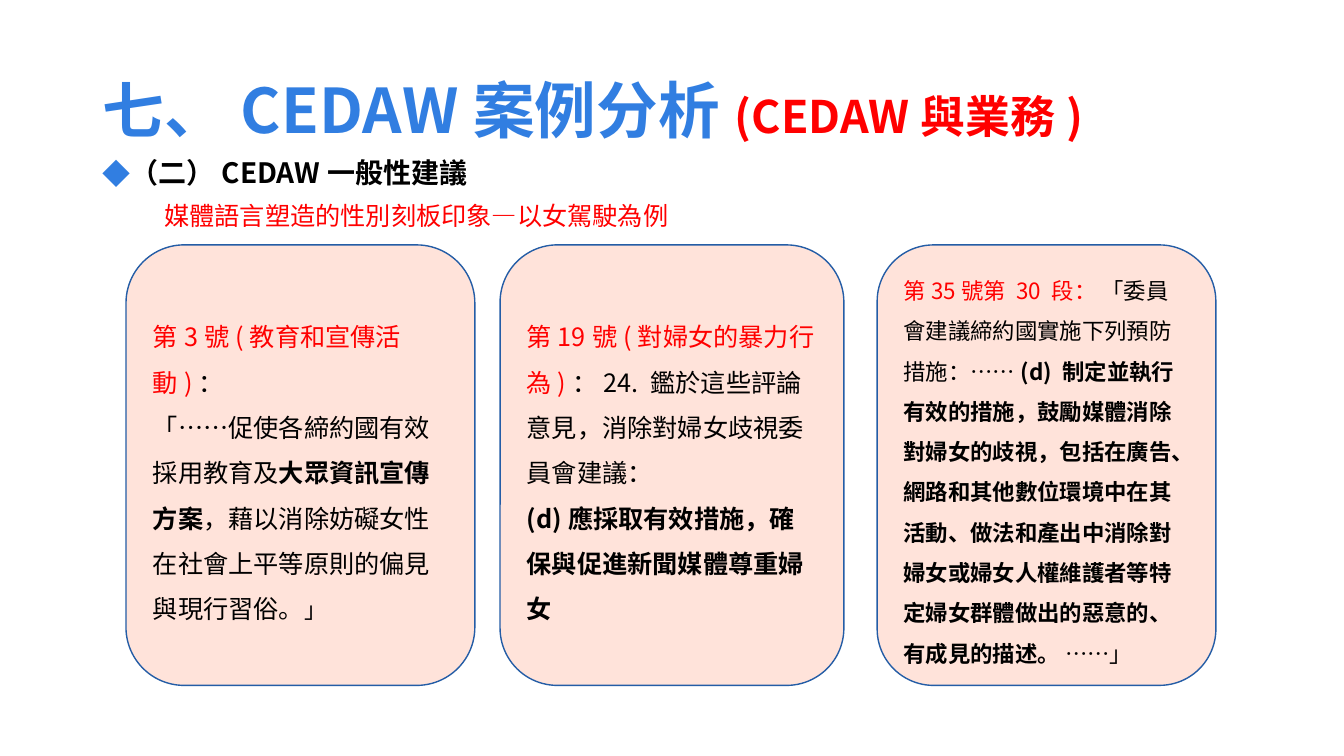
from dataclasses import dataclass
from lxml.etree import SubElement as Sub
from pptx import Presentation
from pptx.dml.color import RGBColor as RGB
from pptx.enum.shapes import MSO_SHAPE as Shape
from pptx.enum.text import MSO_ANCHOR as Anchor, MSO_AUTO_SIZE as Fit, PP_ALIGN as Align
from pptx.oxml.ns import qn
from pptx.util import Inches, Pt


@dataclass(frozen=True)
class Theme:
    font: str = "Noto Sans CJK TC"
    blue: RGB = RGB(0x31, 0x7E, 0xE1)
    red: RGB = RGB(0xFF, 0, 0)
    black: RGB = RGB(0, 0, 0)
    pink: RGB = RGB(0xFF, 0xE3, 0xDA)
    edge: RGB = RGB(0x24, 0x5D, 0xA6)
    title: int = 44
    topic: int = 32
    head: int = 20
    body: int = 18
    small: int = 16


theme = Theme()


def write(para, runs, space):
    para.alignment = Align.LEFT
    para.line_spacing = space
    para.font.name = theme.font
    for text, size, color, bold in runs:
        run = para.add_run()
        run.text = text
        run.font.size = Pt(size)
        run.font.bold = bold
        run.font.color.rgb = color
        run.font.name = theme.font
        Sub(run.font._element, qn("a:ea"), typeface=theme.font)


deck = Presentation()
deck.slide_width, deck.slide_height = Inches(13.33), Inches(7.5)
slide = deck.slides.add_slide(deck.slide_layouts[5])

title = slide.shapes.title
title.left, title.top = Inches(0.92), Inches(0.4)
title.width, title.height = Inches(11.5), Inches(1.45)
frame = title.text_frame
frame.auto_size = Fit.NONE
frame.vertical_anchor = Anchor.MIDDLE
write(frame.paragraphs[0], [
    ("七、CEDAW案例分析", theme.title, theme.blue, True),
    ("(CEDAW與業務)", theme.topic, theme.red, True),
], 0.9)

head = slide.shapes.add_textbox(Inches(0.92), Inches(1.39), Inches(10.85), Inches(0.67))
head.text_frame.word_wrap = True
para = head.text_frame.paragraphs[0]
props = para._p.get_or_add_pPr()
props.set("marL", str(Inches(0.25)))
props.set("indent", str(-Inches(0.25)))
tint = Sub(props, qn("a:buClr"))
Sub(tint, qn("a:srgbClr"), val=str(theme.blue))
Sub(props, qn("a:buFont"), typeface=theme.font)
Sub(props, qn("a:buChar"), char="◆")
write(para, [("（二）CEDAW一般性建議", theme.head, theme.black, True)], 1.3)

topic = slide.shapes.add_textbox(Inches(1.53), Inches(1.94), Inches(5.25), Inches(0.4))
topic.text_frame.word_wrap = False
write(topic.text_frame.paragraphs[0], [
    ("媒體語言塑造的性別刻板印象—以女駕駛為例", theme.body, theme.red, False),
], 1.0)

cards = [
    (1.25, 3.46, [
        [("第3號(教育和宣傳活動)", theme.body, theme.red, False),
         ("：", theme.body, theme.black, False)],
        [("「⋯⋯促使各締約國有效採用教育及", theme.body, theme.black, False),
         ("大眾資訊宣傳方案", theme.body, theme.black, True),
         ("，藉以消除妨礙女性在社會上平等原則的偏見與現行習俗。", theme.body, theme.black, False),
         ("」", theme.small, theme.black, False)],
    ]),
    (4.96, 3.41, [
        [("第19號(對婦女的暴力行為)", theme.body, theme.red, False),
         ("：24. 鑑於這些評論意見，消除對婦女歧視委員會建議：", theme.body, theme.black, False)],
        [("(d)應採取有效措施，確保與促進新聞媒體尊重婦女", theme.body, theme.black, True)],
    ]),
    (8.7, 3.36, [
        [("第35號第 30 段： ", theme.small, theme.red, False),
         ("「委員會建議締約國實施下列預防措施：⋯⋯", theme.small, theme.black, False),
         ("(d) 制定並執行有效的措施，鼓勵媒體消除對婦女的歧視，包括在廣告、"
          "網路和其他數位環境中在其活動、做法和產出中消除對婦女或婦女人權維護者"
          "等特定婦女群體做出的惡意的、有成見的描述。 ", theme.small, theme.black, True),
         ("⋯⋯」", theme.small, theme.black, False)],
    ]),
]
for left, width, paras in cards:
    card = slide.shapes.add_shape(
        Shape.ROUNDED_RECTANGLE, Inches(left), Inches(2.43), Inches(width), Inches(4.37))
    card.shadow.inherit = False
    card.fill.solid()
    card.fill.fore_color.rgb = theme.pink
    card.line.color.rgb = theme.edge
    card.line.width = Pt(1)
    frame = card.text_frame
    frame.word_wrap = True
    frame.vertical_anchor = Anchor.MIDDLE
    for i, runs in enumerate(paras):
        para = frame.add_paragraph() if i else frame.paragraphs[0]
        write(para, runs, 1.5)

deck.save("out.pptx")
